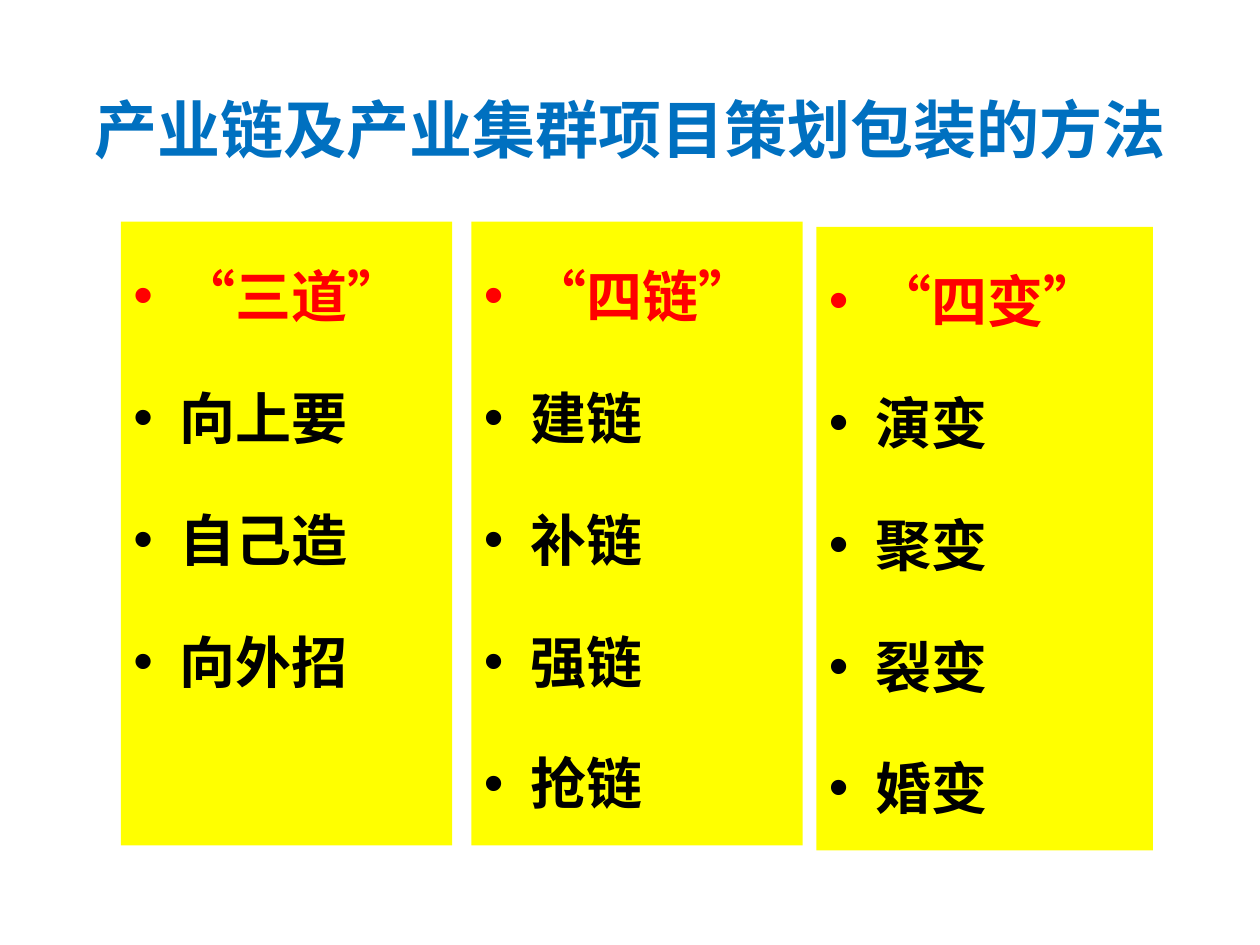
from lxml import etree
from pptx import Presentation
from pptx.dml.color import RGBColor
from pptx.enum.shapes import MSO_SHAPE
from pptx.enum.text import MSO_ANCHOR, MSO_AUTO_SIZE, PP_ALIGN
from pptx.oxml.ns import qn
from pptx.util import Inches, Pt

RECTANGLE = MSO_SHAPE.RECTANGLE
TOP, MIDDLE = MSO_ANCHOR.TOP, MSO_ANCHOR.MIDDLE
LEFT, CENTER = PP_ALIGN.LEFT, PP_ALIGN.CENTER
NO_AUTOFIT = MSO_AUTO_SIZE.NONE


def color(hex_code):
    return RGBColor.from_string(hex_code)


class MethodSlide:
    cjk_font, latin_font = "Noto Sans CJK SC", "Arial"
    title_color, heading_color, item_color = "0070C0", "FF0000", "000000"
    panel_color = "FFFF00"
    title_size, list_size = 36, 32
    indent = Inches(0.37)

    def __init__(self, slide):
        self.slide = slide

    def place(self, shape, left, top, width, height):
        shape.left, shape.top = Inches(left), Inches(top)
        shape.width, shape.height = Inches(width), Inches(height)

    def format_run(self, run, size, hex_code, latin):
        run.font.size = Pt(size)
        run.font.bold = True
        run.font.color.rgb = color(hex_code)
        run.font.name = latin
        properties = run.font._element
        properties.set("lang", "zh-CN")
        etree.SubElement(properties, qn("a:ea"), typeface=self.cjk_font)

    def add_bullet(self, paragraph):
        """Give the paragraph a hanging round bullet."""
        properties = paragraph._p.get_or_add_pPr()
        properties.set("marL", str(self.indent))
        properties.set("indent", str(-self.indent))
        etree.SubElement(properties, qn("a:buFont"), typeface=self.latin_font)
        etree.SubElement(properties, qn("a:buChar"), char="•")

    def title(self, text, box):
        title = self.slide.shapes.title
        self.place(title, *box)
        frame = title.text_frame
        frame.text = text
        frame.auto_size = NO_AUTOFIT
        frame.vertical_anchor = MIDDLE
        paragraph = frame.paragraphs[0]
        paragraph.alignment = CENTER
        self.format_run(paragraph.runs[0], self.title_size, self.title_color,
                        self.cjk_font)

    def panel(self, box):
        panel = self.slide.shapes.add_shape(RECTANGLE, 0, 0, 0, 0)
        panel.shadow.inherit = False
        self.fill_panel(panel, box)
        return panel

    def fill_panel(self, panel, box):
        self.place(panel, *box)
        panel.fill.solid()
        panel.fill.fore_color.rgb = color(self.panel_color)
        panel.line.fill.background()

    def method_list(self, panel, heading, items):
        frame = panel.text_frame
        frame.text = "\n".join([heading, *items])
        frame.word_wrap = True
        frame.auto_size = NO_AUTOFIT
        frame.vertical_anchor = TOP
        for index, paragraph in enumerate(frame.paragraphs):
            paragraph.alignment = LEFT
            paragraph.line_spacing = 1.5
            paragraph.space_before = paragraph.space_after = Pt(6)
            self.add_bullet(paragraph)
            is_heading = index == 0
            self.format_run(
                paragraph.runs[0], self.list_size,
                self.heading_color if is_heading else self.item_color,
                self.cjk_font if is_heading else self.latin_font)


def main():
    deck = Presentation()
    deck.slide_width, deck.slide_height = Inches(10), Inches(7.5)
    slide = deck.slides.add_slide(deck.slide_layouts[1])
    methods = MethodSlide(slide)
    methods.title("产业链及产业集群项目策划包装的方法", (0.5, 0.62, 9, 0.79))

    chains = slide.placeholders[1]
    methods.fill_panel(chains, (3.74, 1.76, 2.63, 4.95))
    changes = methods.panel((6.48, 1.8, 2.67, 4.95))
    routes = methods.panel((0.96, 1.76, 2.63, 4.95))

    methods.method_list(chains, "“四链”", ["建链", "补链", "强链", "抢链"])
    methods.method_list(changes, "“四变”", ["演变", "聚变", "裂变", "婚变"])
    methods.method_list(routes, "“三道”", ["向上要", "自己造", "向外招"])
    deck.save("out.pptx")


if __name__ == "__main__":
    main()
